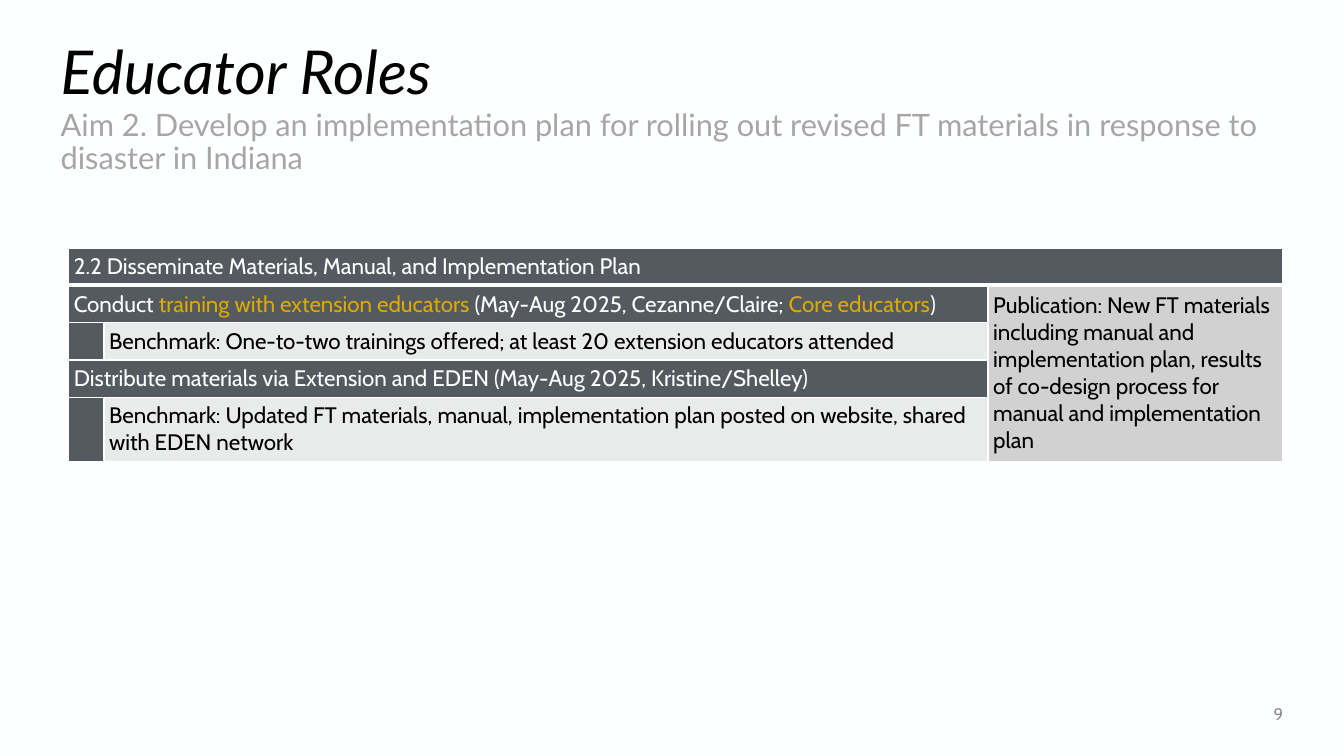
import lxml.etree
import pptx
import pptx.dml.color
import pptx.enum.text
import pptx.oxml.ns
import pptx.util

Cm = pptx.util.Cm
ALIGN = pptx.enum.text.PP_ALIGN
ANCHOR = pptx.enum.text.MSO_ANCHOR

WHITE, BLACK, SLATE, GOLD = "FEFFFF", "000000", "555960", "DAAA00"
LIGHT, SILVER = "E9EAEA", "D1D1D2"

COLUMN_WIDTHS = [0.89, 22.28, 7.42]
ROW_HEIGHTS = [0.94, 0.94, 0.94, 0.94, 1.6]

# (row, column, rows spanned, columns spanned, fill, [(text, colour), ...])
CELLS = [
    (0, 0, 1, 3, SLATE, [("2.2 Disseminate Materials, Manual, and Implementation Plan", WHITE)]),
    (1, 0, 1, 2, SLATE, [
        ("Conduct ", WHITE),
        ("training with extension educators ", GOLD),
        ("(May-Aug 2025, Cezanne/Claire; ", WHITE),
        ("Core educators", GOLD),
        (")", WHITE),
    ]),
    (1, 2, 4, 1, SILVER, [("Publication: New FT materials including manual and implementation plan, "
                           "results of co-design process for manual and implementation plan", BLACK)]),
    (2, 0, 1, 1, SLATE, []),
    (2, 1, 1, 1, LIGHT, [("Benchmark: One-to-two trainings offered; "
                          "at least 20 extension educators attended", BLACK)]),
    (3, 0, 1, 2, SLATE, [("Distribute materials via Extension and EDEN "
                          "(May-Aug 2025, Kristine/Shelley)", WHITE)]),
    (4, 0, 1, 1, SLATE, []),
    (4, 1, 1, 1, LIGHT, [("Benchmark: Updated FT materials, manual, implementation plan "
                          "posted on website, shared with EDEN network", BLACK)]),
]


def rgb(color):
    return pptx.dml.color.RGBColor.from_string(color)


def style_font(font, name, size, color, italic=False):
    font.name = name
    font.size = pptx.util.Pt(size)
    font.color.rgb = rgb(color)
    font.italic = italic


def add_text(page, box, text, name, size, color, italic=False,
             align=ALIGN.LEFT, anchor=ANCHOR.MIDDLE, spacing=0.9):
    frame = page.shapes.add_textbox(*map(Cm, box)).text_frame
    frame.word_wrap = True
    frame.vertical_anchor = anchor
    frame.text = text
    para = frame.paragraphs[0]
    para.alignment = align
    para.line_spacing = spacing
    style_font(para.runs[0].font, name, size, color, italic)


def add_heading(page, left, top, width):
    add_text(page, (left, top, width, 1.63), "Educator Roles", "Lato", 43.2, BLACK, italic=True)
    add_text(page, (left, top + 1.57, width, 1.02),
             "Aim 2. Develop an implementation plan for rolling out revised FT materials "
             "in response to disaster in Indiana",
             "Lato", 22, "A6A6A6", anchor=ANCHOR.TOP)


def set_borders(cell, widths):
    """Draw the left, right, top and bottom edges in points."""
    properties = cell._tc.get_or_add_tcPr()
    for index, (side, width) in enumerate(zip("LRTB", widths)):
        line = lxml.etree.Element(pptx.oxml.ns.qn(f"a:ln{side}"), w=str(pptx.util.Pt(width)))
        fill = lxml.etree.SubElement(line, pptx.oxml.ns.qn("a:solidFill"))
        lxml.etree.SubElement(fill, pptx.oxml.ns.qn("a:srgbClr"), val=WHITE)
        properties.insert(index, line)


def fill_cell(cell, spans):
    margin = Cm(0.13) if spans else 0
    cell.margin_left = cell.margin_right = cell.margin_top = cell.margin_bottom = margin
    cell.vertical_anchor = ANCHOR.MIDDLE
    para = cell.text_frame.paragraphs[0]
    for text, color in spans:
        span = para.add_run()
        span.text = text
        style_font(span.font, "Cabin", 16, color)


def add_plan_table(page, left, top):
    table = page.shapes.add_table(
        len(ROW_HEIGHTS), len(COLUMN_WIDTHS), Cm(left), Cm(top),
        Cm(sum(COLUMN_WIDTHS)), Cm(sum(ROW_HEIGHTS))).table
    table.first_row = table.horz_banding = False
    for column, width in zip(table.columns, COLUMN_WIDTHS):
        column.width = Cm(width)
    for row, height in zip(table.rows, ROW_HEIGHTS):
        row.height = Cm(height)
    for row, column, row_span, column_span, color, spans in CELLS:
        first = table.cell(row, column)
        if row_span * column_span > 1:
            first.merge(table.cell(row + row_span - 1, column + column_span - 1))
        for r in range(row, row + row_span):
            for c in range(column, column + column_span):
                cell = table.cell(r, c)
                cell.fill.solid()
                cell.fill.fore_color.rgb = rgb(color)
                set_borders(cell, (1, 1, 3 if r == 1 else 1, 3 if r == 0 else 1))
        fill_cell(first, spans)


def main():
    deck = pptx.Presentation()
    deck.slide_width, deck.slide_height = Cm(33.87), Cm(19.05)
    page = deck.slides.add_slide(deck.slide_layouts[6])
    page.background.fill.solid()
    page.background.fill.fore_color.rgb = rgb(WHITE)
    add_heading(page, 1.28, 1.07, 31.3)
    add_plan_table(page, 1.73, 6.25)
    add_text(page, (29.54, 17.48, 3.05, 1.02), "9", "Cabin", 12, "8C8C8C",
             align=ALIGN.RIGHT, spacing=1.0)
    deck.save("out.pptx")


if __name__ == "__main__":
    main()
